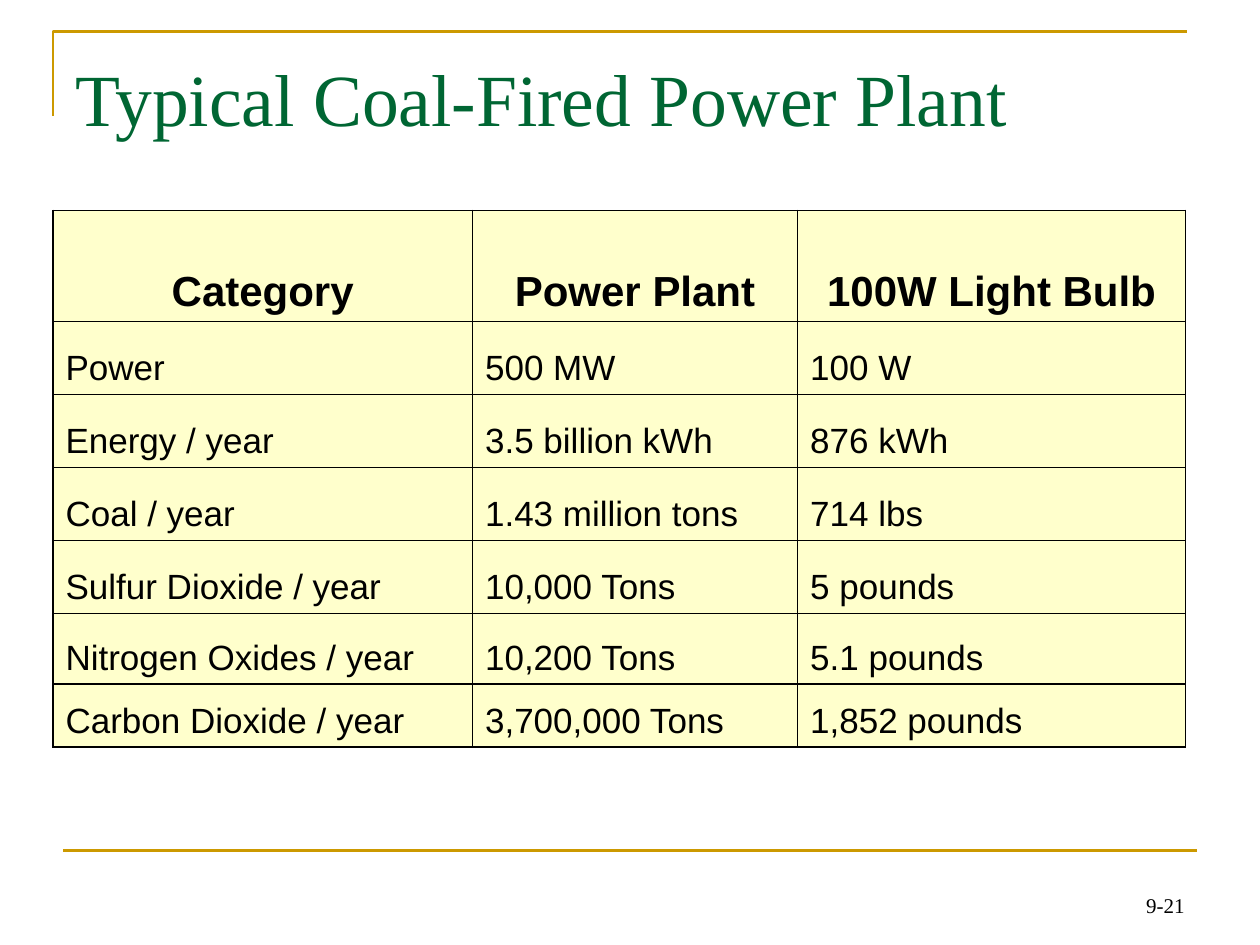
from dataclasses import dataclass

from lxml.etree import SubElement
from pptx import Presentation
from pptx.dml.color import RGBColor
from pptx.enum.shapes import MSO_CONNECTOR
from pptx.enum.text import MSO_ANCHOR, PP_ALIGN
from pptx.oxml.ns import qn
from pptx.util import Inches, Pt

# Content
TITLE = "Typical Coal-Fired Power Plant"
SLIDE_NUMBER = "9-21"
ROWS = [
    ("Category", "Power Plant", "100W Light Bulb"),
    ("Power", "500 MW", "100 W"),
    ("Energy / year", "3.5 billion kWh", "876 kWh"),
    ("Coal / year", "1.43 million tons", "714 lbs"),
    ("Sulfur Dioxide / year", "10,000 Tons", "5 pounds"),
    ("Nitrogen Oxides / year", "10,200 Tons", "5.1 pounds"),
    ("Carbon Dioxide / year", "3,700,000 Tons", "1,852 pounds"),
]
COLUMN_WIDTHS = [3.33, 2.58, 3.08]
ROW_HEIGHTS = [0.88, 0.58, 0.58, 0.58, 0.58, 0.56, 0.5]


@dataclass(frozen=True)
class Theme:
    title_color: str = "006633"
    text_color: str = "000000"
    accent: str = "CC9900"
    cell_fill: str = "FFFFCC"
    serif: str = "Times New Roman"
    sans: str = "Arial"
    title_size: int = 42
    header_size: int = 24
    body_size: int = 20
    number_size: int = 12
    rule_width: float = 1.5
    border_width: float = 1


THEME = Theme()


def style_text(paragraph, name, size, color, bold=False, align=PP_ALIGN.LEFT):
    paragraph.alignment = align
    font = paragraph.font
    font.name, font.size, font.bold = name, Pt(size), bold
    font.color.rgb = RGBColor.from_string(color)


def style_rule(shape):
    shape.line.color.rgb = RGBColor.from_string(THEME.accent)
    shape.line.width = Pt(THEME.rule_width)


def add_borders(cell):
    properties = cell._tc.get_or_add_tcPr()
    for index, side in enumerate(("lnL", "lnR", "lnT", "lnB")):
        line = properties.makeelement(qn(f"a:{side}"), {"w": str(Pt(THEME.border_width))})
        fill = SubElement(line, qn("a:solidFill"))
        SubElement(fill, qn("a:srgbClr"), val=THEME.text_color)
        properties.insert(index, line)


presentation = Presentation()
presentation.slide_width, presentation.slide_height = Inches(10), Inches(7.5)
slide = presentation.slides.add_slide(presentation.slide_layouts[5])

# Corner rule around the title
builder = slide.shapes.build_freeform(Inches(0.42), Inches(0.92))
builder.add_line_segments(
    [(Inches(0.42), Inches(0.25)), (Inches(9.42), Inches(0.25))], close=False
)
corner = builder.convert_to_shape()
corner.fill.background()
corner.shadow.inherit = False
style_rule(corner)

# Footer rule
footer_rule = slide.shapes.add_connector(
    MSO_CONNECTOR.STRAIGHT, Inches(0.5), Inches(6.75), Inches(9.5), Inches(6.75)
)
style_rule(footer_rule)
SubElement(footer_rule._element.spPr, qn("a:effectLst"))

# Slide number
number_box = slide.shapes.add_textbox(Inches(7.17), Inches(6.83), Inches(2.33), Inches(0.5))
number_frame = number_box.text_frame
number_frame.word_wrap = True
number_frame.vertical_anchor = MSO_ANCHOR.BOTTOM
number_frame.text = SLIDE_NUMBER
style_text(number_frame.paragraphs[0], THEME.serif, THEME.number_size,
           THEME.text_color, align=PP_ALIGN.RIGHT)

# Title
title = slide.shapes.title
title.left, title.top = Inches(0.5), Inches(0.3)
title.width, title.height = Inches(9), Inches(1.25)
title_frame = title.text_frame
title_frame.text = TITLE
title_frame.vertical_anchor = MSO_ANCHOR.TOP
title_frame.margin_top = Inches(0.12)
style_text(title_frame.paragraphs[0], THEME.serif, THEME.title_size, THEME.title_color)

# Comparison table
table = slide.shapes.add_table(
    len(ROWS), len(COLUMN_WIDTHS), Inches(0.42), Inches(1.67),
    Inches(sum(COLUMN_WIDTHS)), Inches(sum(ROW_HEIGHTS)),
).table
for column, width in zip(table.columns, COLUMN_WIDTHS):
    column.width = Inches(width)
for row_index, (row, height, texts) in enumerate(zip(table.rows, ROW_HEIGHTS, ROWS)):
    row.height = Inches(height)
    header = row_index == 0
    for cell, text in zip(row.cells, texts):
        cell.text = text
        cell.vertical_anchor = MSO_ANCHOR.BOTTOM
        cell.fill.solid()
        cell.fill.fore_color.rgb = RGBColor.from_string(THEME.cell_fill)
        add_borders(cell)
        style_text(
            cell.text_frame.paragraphs[0], THEME.sans,
            THEME.header_size if header else THEME.body_size, THEME.text_color,
            bold=header, align=PP_ALIGN.CENTER if header else PP_ALIGN.LEFT,
        )

presentation.save("out.pptx")
